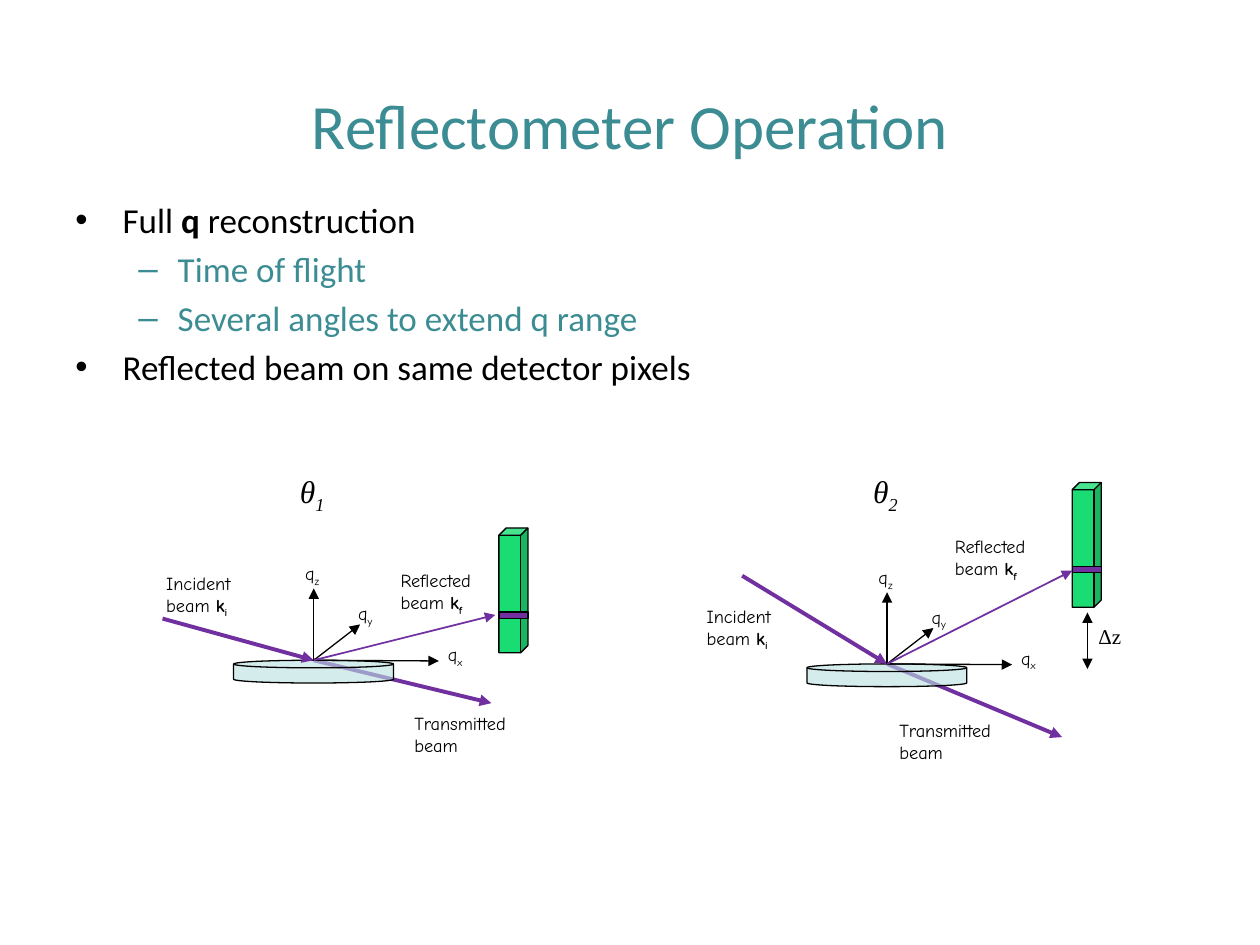
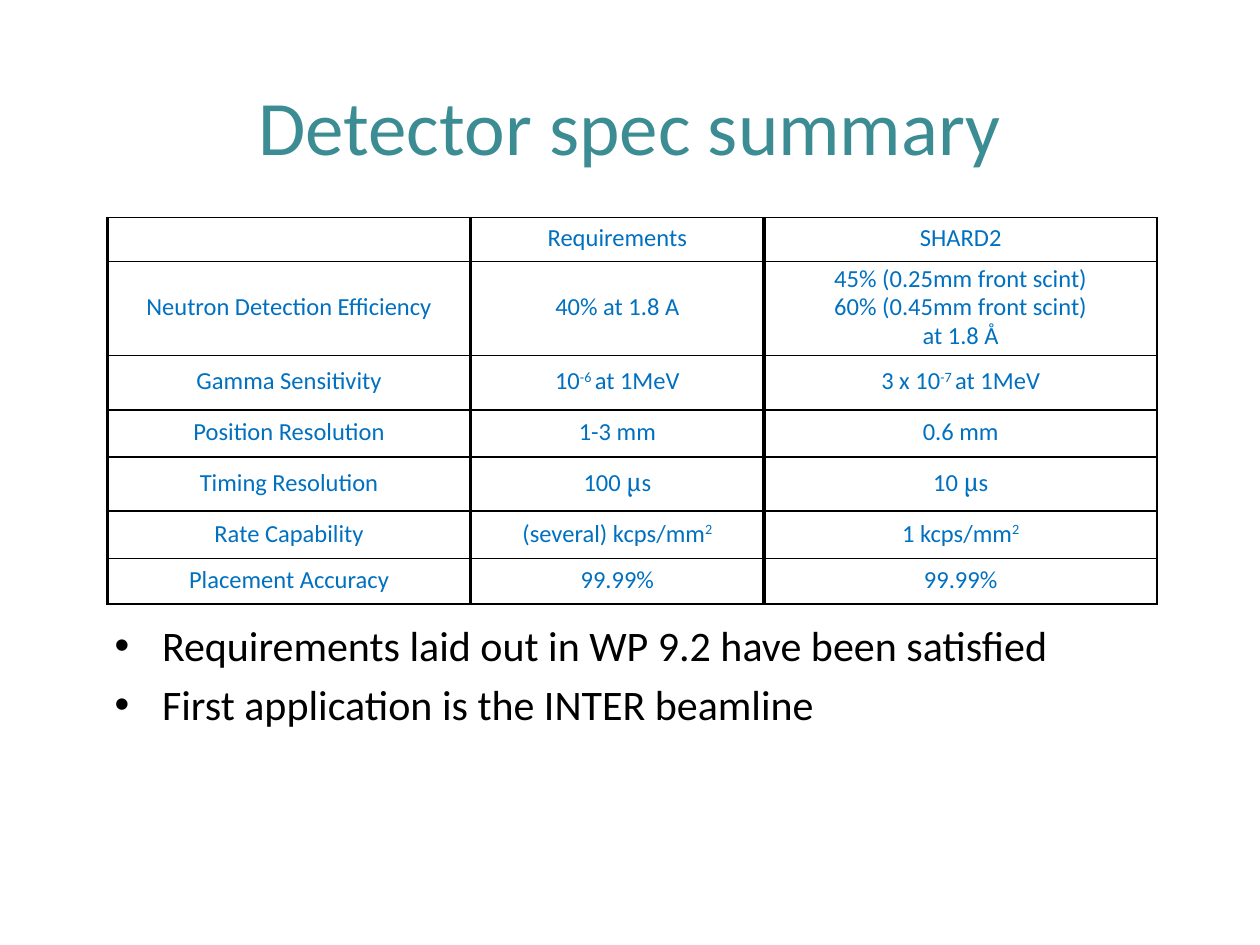
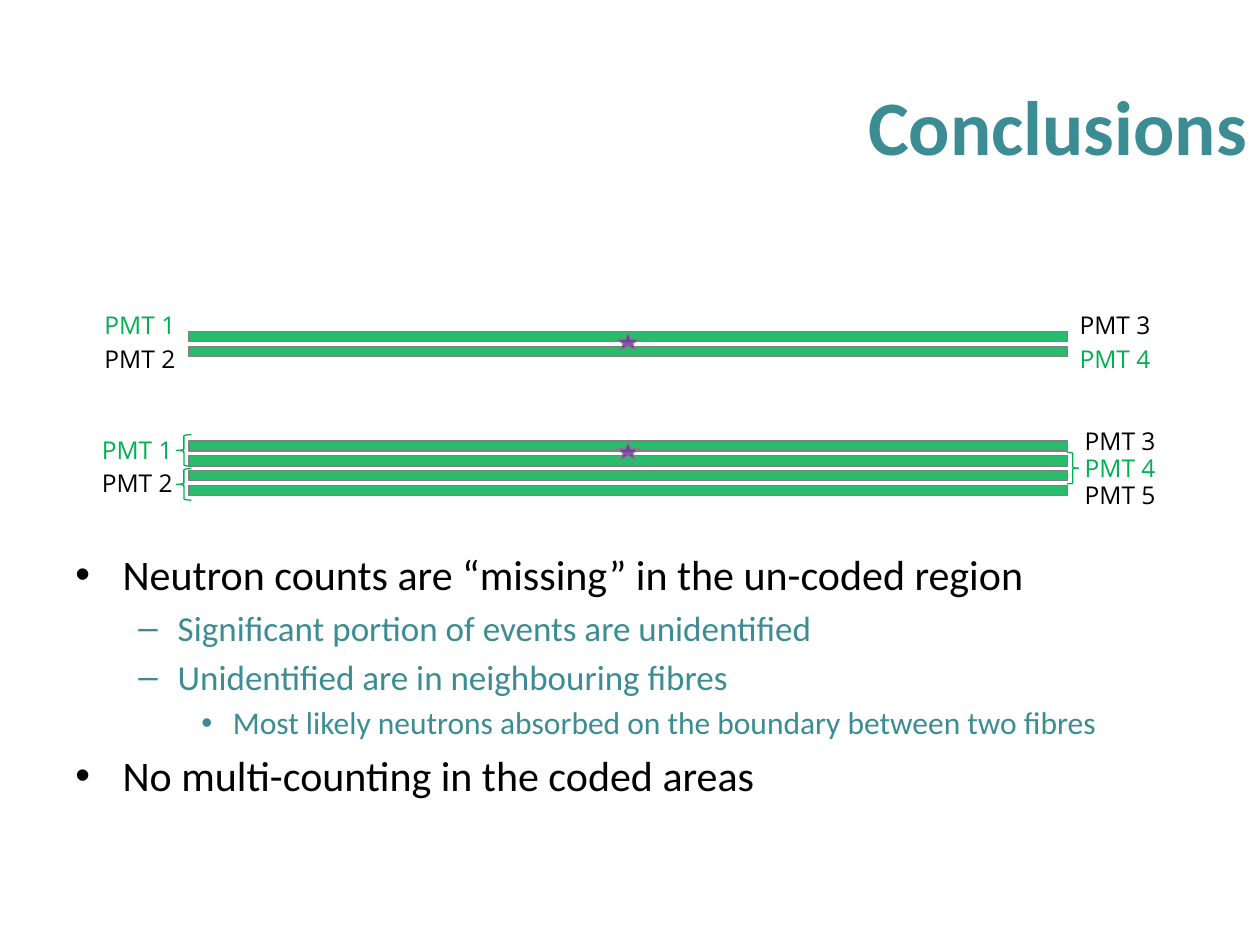
from lxml import etree
from pptx import Presentation
from pptx import util as u
from pptx.dml.color import RGBColor
from pptx.enum import shapes, text
from pptx.oxml.ns import qn

Pt = u.Pt
KIND = shapes.MSO_SHAPE
LEFT, MID, RIGHT = text.PP_ALIGN.LEFT, text.PP_ALIGN.CENTER, text.PP_ALIGN.RIGHT


class Theme:
    teal, black, white, gray = "3C8C93", "000000", "FFFFFF", "808080"
    blue, violet, green, glass, mint = "0070C0", "7030A0", "00B050", "BBE0E3", "00DA63"
    sans, hand, serif, open = "Calibri", "Comic Neue", "Times New Roman", "Open Sans"
    huge, large, head, body, note, mark, cell, small, tiny = 44, 36, 24, 20, 18, 18, 14, 12, 10.5
    thin, fine, edge, thick = 0.75, 1, 2.25, 2.25
    # left margin, hanging indent and bullet of each list level
    levels = [(27, -27, "•"), (58.5, -22.5, "–"), (90, -18, "•")]


# ---- Content: a paragraph is a string or a list of runs (string or (string, format))
SUB, SUP, BOLD = {"base": -25}, {"base": 30}, {"bold": True}
MU = ("μ", {"font": "Cambria"})

BEAM_LIST = [
    (0, Theme.body, ["Full ", ("q ", BOLD), "reconstruction"]),
    (1, Theme.body, "Time of flight"),
    (1, Theme.body, "Several angles to extend q range"),
    (0, Theme.body, "Reflected beam on same detector pixels"),
]
SPEC_LIST = [
    (0, Theme.head, "Requirements laid out in WP 9.2 have been satisfied"),
    (0, Theme.head, "First application is the INTER beamline"),
]
END_LIST = [
    (0, Theme.head, "Neutron counts are “missing” in the un-coded region"),
    (1, Theme.body, "Significant portion of events are unidentified"),
    (1, Theme.body, "Unidentified are in neighbouring fibres"),
    (2, Theme.note, "Most likely neutrons absorbed on the boundary between two fibres"),
    (0, Theme.head, "No multi-counting in the coded areas"),
]

# beam labels: width, then the paragraphs
BEAMS = {
    "in": (60, ["Incident", ["beam ", ("k", BOLD), ("i", BOLD | SUB)]]),
    "out": (67, ["Reflected", ["beam ", ("k", BOLD), ("f", BOLD | SUB)]]),
    "through": (79.2, ["Transmitted", "beam"]),
}
# q axes: arrow tip and label place, measured from where the beam hits the sample
AXES = {"z": ((0, -41), (-12, -59.3)), "y": ((26.5, -20.5), (18.3, -36.7)),
        "x": ((71.5, 0.4), (69.5, -13.3))}
# each set-up: hit point, far ends of the beams, label places, detector top
SETUPS = [
    {"angle": "1", "hit": (179.3, 377.3), "top": -75.6,
     "ends": {"in": (-86.4, -23.8), "out": (103.7, -25.9), "through": (101.5, 24.5)},
     "tags": {"in": (-91.4, -54), "out": (42.5, -55.4), "through": (50.4, 25.9)}},
    {"angle": "2", "hit": (506.9, 379.4), "top": -103.7,
     "ends": {"in": (-82.8, -50.4), "out": (105.8, -53.3), "through": (100, 41.8)},
     "tags": {"in": (-110.2, -37.4), "out": (31.7, -77), "through": (0, 28.1)}},
]

# table rows: height, then the paragraphs of each cell
SPECS = [
    (25.2, [""], ["Requirements"], ["SHARD2"]),
    (53.7, ["Neutron Detection Efficiency"], ["40% at 1.8 A"],
     ["45% (0.25mm front scint)", "60% (0.45mm front scint)", "at 1.8 Å"]),
    (31, ["Gamma Sensitivity"], [["10", ("-6 ", SUP), "at 1MeV"]],
     [["3 x 10", ("-7 ", SUP), "at 1MeV"]]),
    (27, ["Position Resolution"], ["1-3 mm"], ["0.6 mm"]),
    (31, ["Timing Resolution"], [["100 ", MU, "s"]], [["10 ", MU, "s"]]),
    (27, ["Rate Capability"], [["(several) kcps/mm", ("2", SUP)]],
     [["1 kcps/mm", ("2", SUP)]]),
    (26, ["Placement Accuracy"], ["99.99%"], ["99.99%"]),
]
SPEC_COLS = (207.4, 167.8, 224.6)

# fibre stacks: top, fibre count, tubes (name, left, top, colour)
STACKS = [
    (189.4, 2, [("PMT 1", 52.6, 173.5, Theme.green), ("PMT 2", 52.6, 193, Theme.black),
                ("PMT 3", 609.8, 173.5, Theme.black), ("PMT 4", 609.8, 193, Theme.green)]),
    (252, 4, [("PMT 1", 51.1, 244.8, Theme.green), ("PMT 2", 51.1, 264.2, Theme.black),
              ("PMT 3", 612.7, 239.8, Theme.black), ("PMT 4", 612.7, 255.2, Theme.green),
              ("PMT 5", 612.7, 270.7, Theme.black)]),
]
BRACES = [(KIND.LEFT_BRACE, 100.8, 248.4, 8.6), (KIND.LEFT_BRACE, 100.8, 267.8, 8.6),
          (KIND.RIGHT_BRACE, 609.8, 258.5, 6.5)]


# ---- Helpers
def rgb(code):
    return RGBColor.from_string(code)


def write(frame, paras, font=Theme.sans, size=Theme.body, color=Theme.black, bold=False,
          slant=False, align=LEFT, line=None, level=None, fresh=True):
    """Fill a text frame; with fresh=False the paragraphs are added after those there."""
    for n, runs in enumerate(paras):
        first = fresh and n == 0
        para = frame.paragraphs[0] if first else frame.add_paragraph()
        para.alignment = align
        if level is not None:
            left, hang, dot = Theme.levels[level]
            props = para._p.get_or_add_pPr()
            props.set("marL", str(Pt(left)))
            props.set("indent", str(Pt(hang)))
            props.set("lvl", str(level))
            etree.SubElement(props, qn("a:buFont"), typeface="Arial")
            etree.SubElement(props, qn("a:buChar"), char=dot)
        if line:
            para.line_spacing = line
        if not first and (line or level is not None):
            para.space_before = Pt(size * 0.2)
        if not runs:
            etree.SubElement(para._p, qn("a:endParaRPr"), sz=str(int(size * 100)))
            continue
        for part in [runs] if isinstance(runs, str) else runs:
            words, extra = (part, {}) if isinstance(part, str) else part
            run = para.add_run()
            run.text = words
            run.font.name = extra.get("font", font)
            run.font.size = Pt(size)
            run.font.bold = extra.get("bold", bold)
            run.font.italic = slant
            run.font.color.rgb = rgb(color)
            if "base" in extra:
                run._r.get_or_add_rPr().set("baseline", str(extra["base"] * 1000))


def box(slide, x, y, w, h):
    frame = slide.shapes.add_textbox(Pt(x), Pt(y), Pt(w), Pt(h)).text_frame
    frame.word_wrap = True
    return frame


def label(slide, paras, x, y, w, h, **style):
    frame = box(slide, x, y, w, h)
    frame.word_wrap = False
    frame.auto_size = text.MSO_AUTO_SIZE.SHAPE_TO_FIT_TEXT
    write(frame, paras, **style)


def shape(slide, kind, x, y, w, h, fill=None, alpha=100, edge=Theme.black):
    item = slide.shapes.add_shape(kind, Pt(x), Pt(y), Pt(w), Pt(h))
    item.shadow.inherit = False
    item.line.color.rgb = rgb(edge)
    item.line.width = Pt(Theme.thin)
    if fill is None:
        item.fill.background()
        return
    item.fill.solid()
    item.fill.fore_color.rgb = rgb(fill)
    if alpha < 100:
        tint = item._element.spPr.find(qn("a:solidFill"))[0]
        etree.SubElement(tint, qn("a:alpha"), val=str(alpha * 1000))


def arrow(slide, start, end, color=Theme.black, width=Theme.thin, both=False):
    item = slide.shapes.add_connector(
        shapes.MSO_CONNECTOR.STRAIGHT, *(Pt(v) for v in (*start, *end)))
    item.line.color.rgb = rgb(color)
    item.line.width = Pt(width)
    line = item.line._get_or_add_ln()
    for tip in ("headEnd", "tailEnd") if both else ("tailEnd",):
        etree.SubElement(line, qn("a:" + tip), type="triangle")
    etree.SubElement(item._element.spPr, qn("a:effectLst"))


def border(cell, **widths):
    props = cell._tc.get_or_add_tcPr()
    for n, side in enumerate("LRTB"):
        line = etree.Element(qn("a:ln" + side), w=str(Pt(widths.get(side, Theme.fine))))
        fill = etree.SubElement(line, qn("a:solidFill"))
        etree.SubElement(fill, qn("a:srgbClr"), val=Theme.black)
        props.insert(n, line)


def page(deck, title, items, place, **style):
    """Add a slide with its title and bullet list."""
    slide = deck.slides.add_slide(deck.slide_layouts[6])
    frame = box(slide, 0, 26, 720, 90)
    frame.vertical_anchor = text.MSO_ANCHOR.MIDDLE
    write(frame, [title], color=Theme.teal, **style)
    frame = box(slide, *place)
    for n, (level, size, words) in enumerate(items):
        write(frame, [words], size=size, level=level, fresh=n == 0,
              color=Theme.teal if level else Theme.black)
    return slide


# ---- Slide parts
def setup(slide, angle, hit, top, ends, tags):
    def at(spot):
        return hit[0] + spot[0], hit[1] + spot[1]

    # beams and sample
    arrow(slide, hit, at(ends["through"]), Theme.violet, Theme.thick)
    shape(slide, KIND.FLOWCHART_MAGNETIC_DISK, *at((-45.8, 0)), 91.4, 13, Theme.glass, 61)
    arrow(slide, at(ends["in"]), hit, Theme.violet, Theme.thick)
    for tip, _ in AXES.values():
        arrow(slide, hit, at(tip))
    arrow(slide, hit, at(ends["out"]), Theme.violet, Theme.fine)
    # labels
    for beam, (wide, words) in BEAMS.items():
        label(slide, words, *at(tags[beam]), wide, 32.4, font=Theme.hand, size=Theme.tiny)
    for name, (_, spot) in AXES.items():
        label(slide, [["q", (name, SUB)]], *at(spot), 24, 20,
              font=Theme.hand, size=Theme.tiny)
    label(slide, [["θ", (angle, SUB)]], hit[0] - 15, 266.4, 29.5, 29,
          font=Theme.serif, size=Theme.mark, slant=True)
    # detector with the lit pixel
    shape(slide, KIND.CUBE, *at((105.8, top)), 16.6, 71.3, Theme.mint, 90)
    shape(slide, KIND.RECTANGLE, *at((105.8, top + 48)), 16.6, 3.6, Theme.violet)


def grid(slide):
    high = sum(row[0] for row in SPECS)
    table = slide.shapes.add_table(len(SPECS), len(SPEC_COLS), Pt(61.5), Pt(124.3),
                                   Pt(sum(SPEC_COLS)), Pt(high)).table
    table.first_row = table.horz_banding = False
    for col, wide in zip(table.columns, SPEC_COLS):
        col.width = Pt(wide)
    for row, (tall, *cells) in zip(table.rows, SPECS):
        row.height = Pt(tall)
        for n, (cell, paras) in enumerate(zip(row.cells, cells)):
            cell.fill.solid()
            cell.fill.fore_color.rgb = rgb(Theme.white)
            cell.vertical_anchor = text.MSO_ANCHOR.MIDDLE
            last = n == len(cells) - 1
            border(cell, L=Theme.edge, R=Theme.fine if last else Theme.edge)
            write(cell.text_frame, paras, size=Theme.cell, color=Theme.blue,
                  align=MID, line=0.8)


def stack(slide, top, count, tubes):
    for n in range(count):
        shape(slide, KIND.RECTANGLE, 108, top + n * 8.45, 502, 5.8,
              Theme.green, 84, Theme.gray)
    shape(slide, KIND.STAR_5_POINT, 352, top + 0.7, 13.7, 10, Theme.violet, 84, Theme.gray)
    for name, x, y, color in tubes:
        label(slide, [name], x, y, 57, 24.2, font=Theme.open, size=Theme.cell, color=color)


def main():
    deck = Presentation()
    deck.slide_width, deck.slide_height = Pt(720), Pt(540)

    # Reflectometer
    slide = page(deck, "Reflectometer Operation", BEAM_LIST, (36, 109.8, 648, 297),
                 size=Theme.large, align=MID)
    for item in SETUPS:
        setup(slide, **item)
    arrow(slide, (621.4, 350), (621.4, 382.3), both=True)
    label(slide, ["Δz"], 620.6, 352.8, 28, 21.6, font=Theme.serif, size=Theme.small)

    # Detector table
    slide = page(deck, "Detector spec summary", SPEC_LIST, (58.5, 350.6, 612, 178),
                 size=Theme.huge, align=MID)
    grid(slide)

    # Conclusions
    slide = page(deck, "Conclusions", END_LIST, (36, 310, 648, 223),
                 size=Theme.huge, align=RIGHT, bold=True)
    for item in STACKS:
        stack(slide, *item)
    for kind, x, y, wide in BRACES:
        shape(slide, kind, x, y, wide, 18, edge=Theme.green)

    deck.save("out.pptx")


if __name__ == "__main__":
    main()
